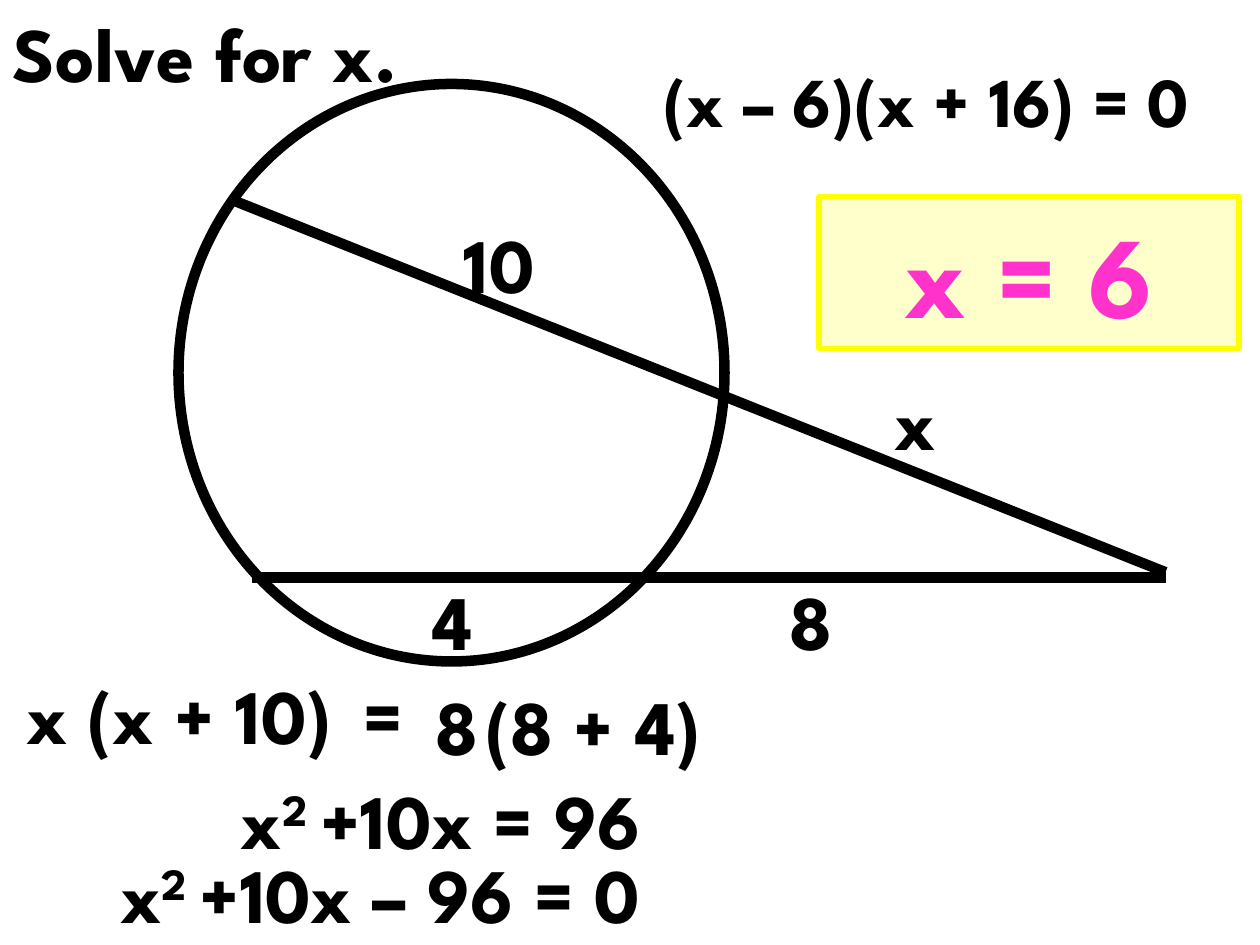
from dataclasses import dataclass

from lxml.etree import SubElement
from pptx import Presentation
from pptx.dml.color import RGBColor as RGB
from pptx.enum.shapes import MSO_CONNECTOR as Conn, MSO_SHAPE as Shape
from pptx.enum.text import MSO_ANCHOR as Anchor, MSO_AUTO_SIZE as Fit, PP_ALIGN as Align
from pptx.oxml.ns import qn
from pptx.util import Inches, Pt


@dataclass(frozen=True)
class Theme:
    font: str = "League Spartan"
    ink: RGB = RGB(0, 0, 0)
    accent: RGB = RGB(0xFF, 0x33, 0xCC)
    panel: RGB = RGB(0xFF, 0xFF, 0xCC)
    border: RGB = RGB(0xFF, 0xFF, 0)
    body: int = 44
    factor: int = 40
    answer: int = 66
    stroke: int = 6
    frame: int = 3


THEME = Theme()
COLS, ROWS = 120, 90
CELL = Inches(10) / COLS


def grid(*cells):
    return [round(c * CELL) for c in cells]


def inside(box, col, row, *size):
    return grid(box[0] + col, box[1] + row, *size)


def write(s, parts, size=THEME.body, color=THEME.ink, align=Align.CENTER,
          anchor=Anchor.TOP, spaced=True):
    tf = s.text_frame
    tf.word_wrap = True
    tf.auto_size = Fit.SHAPE_TO_FIT_TEXT
    tf.vertical_anchor = anchor
    p = tf.paragraphs[0]
    p.alignment = align
    if spaced:
        before = SubElement(p._p.get_or_add_pPr(), qn("a:spcBef"))
        SubElement(before, qn("a:spcPct")).set("val", "50000")
    for i, part in enumerate(parts):
        r = p.add_run()
        r.text = part
        f = r.font
        f.name, f.size, f.bold = THEME.font, Pt(size), True
        f.color.rgb = color
        if i % 2:
            r._r.get_or_add_rPr().set("baseline", "30000")


def add_text(slide, place, *parts, **style):
    write(slide.shapes.add_textbox(*place), parts, **style)


def add_line(slide, start, end):
    s = slide.shapes.add_connector(Conn.STRAIGHT, *start, *end)
    s.line.color.rgb = THEME.ink
    s.line.width = Pt(THEME.stroke)
    SubElement(s._element.spPr, qn("a:effectLst"))


def add_title(slide, box):
    s = slide.shapes.title
    s.left, s.top, s.width, s.height = grid(*box)
    write(s, ["Solve for x."], align=Align.LEFT, anchor=Anchor.BOTTOM, spaced=False)


def add_diagram(slide, box):
    width = box[2]
    add_line(slide, inside(box, width, 46.5), inside(box, 5, 11))
    circle = slide.shapes.add_shape(Shape.OVAL, *inside(box, 0, 0, 52, 55))
    circle.shadow.inherit = False
    circle.fill.background()
    circle.line.color.rgb = THEME.ink
    circle.line.width = Pt(THEME.stroke)
    add_line(slide, inside(box, 7, 47), inside(box, width, 47))
    for label, col, row in (("4", 23, 46), ("x", 67, 27), ("8", 57, 46), ("10", 26, 12)):
        add_text(slide, inside(box, col, row, 12, 10), label, align=Align.LEFT)


def add_working(slide, box):
    steps = (
        (0, 0, 7, ["x"]),
        (4, 0, 30, ["(x + 10)"]),
        (39, 1, 7, ["8"]),
        (39, 1, 33, ["(8 + 4)"]),
        (32, 0, 7, ["="]),
        (16, 10, 50, ["x", "2 ", "+10x = 96"]),
        (5, 17, 60.5, ["x", "2 ", "+10x – 96 = 0"]),
    )
    for col, row, width, parts in steps:
        add_text(slide, inside(box, col, row, width, 10), *parts)


def add_answer(slide, box):
    s = slide.shapes.add_shape(Shape.RECTANGLE, *inside(box, 21.5, 13.8, 40, 14.5))
    s.shadow.inherit = False
    s.fill.solid()
    s.fill.fore_color.rgb = THEME.panel
    s.line.color.rgb = THEME.border
    s.line.width = Pt(THEME.frame)
    write(s, ["x = 6"], size=THEME.answer, color=THEME.accent)
    add_text(slide, inside(box, 0, 0, box[2], 9.2), "(x – 6)(x + 16) = 0", size=THEME.factor)


def main():
    prs = Presentation()
    prs.slide_width, prs.slide_height = grid(COLS, ROWS)
    slide = prs.slides.add_slide(prs.slide_layouts[5])
    add_title(slide, (0, -0.1, 98, 10))
    add_diagram(slide, (17, 8, 94, 56))
    add_working(slide, (1, 63, 72, 27))
    add_answer(slide, (56.5, 4.9, 63.5, 28.3))
    prs.save("out.pptx")


if __name__ == "__main__":
    main()
